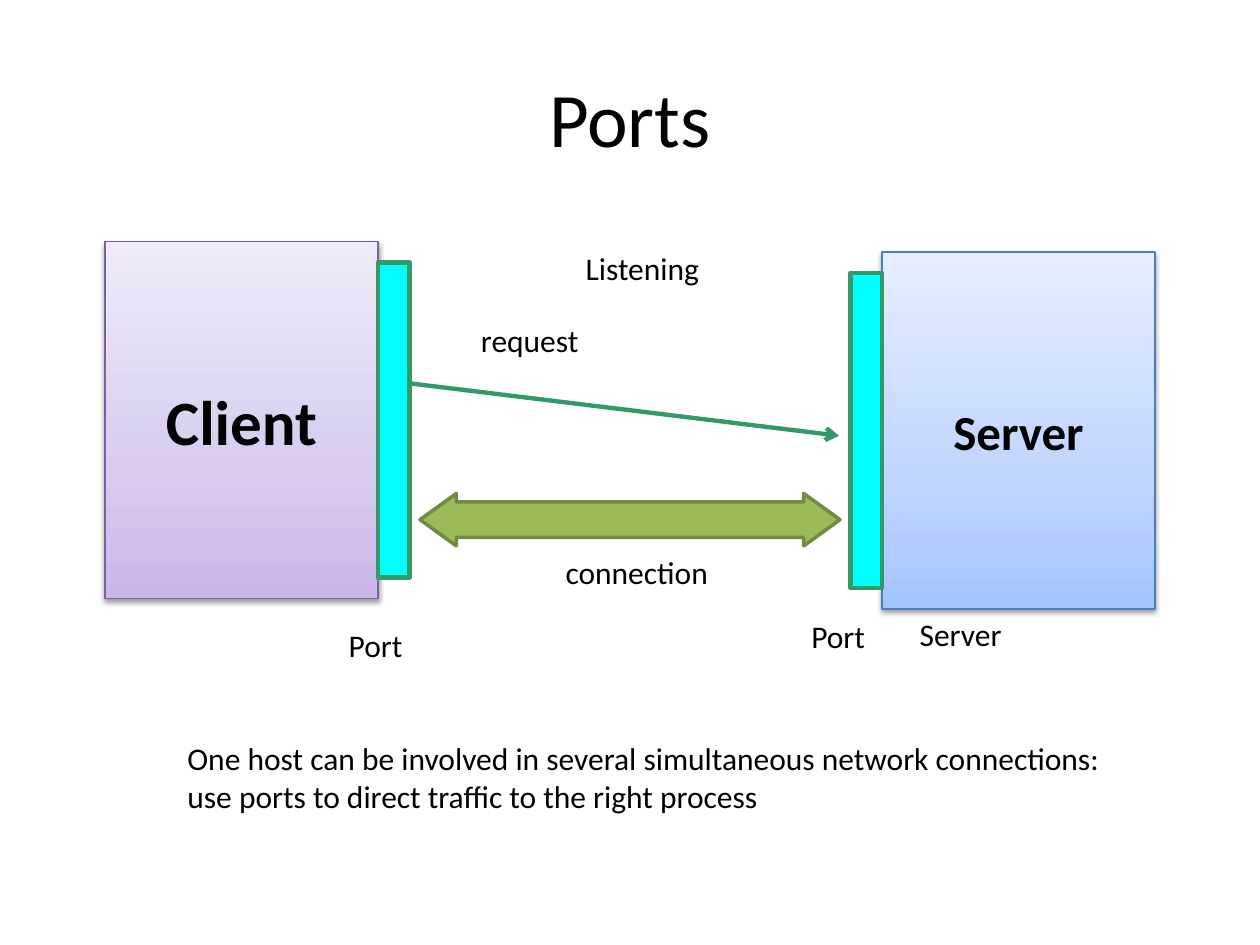
from copy import deepcopy
from dataclasses import dataclass

from lxml.etree import SubElement
from pptx import Presentation
from pptx.dml.color import RGBColor
from pptx.enum.shapes import MSO_CONNECTOR as Connector, MSO_SHAPE as Shape
from pptx.enum.text import MSO_ANCHOR as Anchor, PP_ALIGN as Align
from pptx.oxml.ns import qn
from pptx.util import Pt

FONT = "Calibri"
BLACK = RGBColor(0x00, 0x00, 0x00)
CYAN = RGBColor(0x00, 0xFF, 0xFF)
GREEN = RGBColor(0x33, 0x99, 0x66)
OLIVE = RGBColor(0x9B, 0xBB, 0x59)
DARK_OLIVE = RGBColor(0x73, 0x8A, 0x42)
PURPLE = RGBColor(0x7D, 0x60, 0xA0)
LILACS = (RGBColor(0xC9, 0xB5, 0xE8), RGBColor(0xD8, 0xCB, 0xEE), RGBColor(0xF0, 0xEA, 0xF9))
BLUE = RGBColor(0x4B, 0x7E, 0xBC)
SKIES = (RGBColor(0xA4, 0xC4, 0xFF), RGBColor(0xBF, 0xD4, 0xFF), RGBColor(0xE6, 0xEE, 0xFF))
STOPS = (0, 0.35, 1)

HOST_WIDTH, HOST_HEIGHT = 156, 204
PORT_WIDTH, PORT_HEIGHT, PORT_INSET = 18, 180, 12


@dataclass
class Host:
    name: str
    left: float
    top: float
    port_left: float
    size: float
    line: RGBColor
    gradient: tuple


@dataclass
class Label:
    text: str
    left: float
    top: float
    width: float
    height: float = 29
    align: Align = Align.LEFT


HOSTS = [
    Host("Client", 60, 138, 60 + HOST_WIDTH, 36, PURPLE, LILACS),
    Host("Server", 504, 144, 504 - PORT_WIDTH, 28, BLUE, SKIES),
]
LABELS = [
    Label("Server", 518.4, 347.8, 121),
    Label("Listening", 327.6, 139, 158),
    Label("request", 267.8, 180, 136),
    Label("connection", 315.4, 312.5, 97, align=Align.CENTER),
    Label("Port", 456.5, 349.2, 79),
    Label("Port", 192.2, 354.2, 55),
    Label("One host can be involved in several simultaneous network connections:\n"
          "use ports to direct traffic to the right process", 100, 419, 542, 51),
]


def write(frame, text: str, size: float, align: Align, bold: bool = False) -> None:
    frame.text = text
    for paragraph in frame.paragraphs:
        paragraph.alignment = align
        font = paragraph.font
        font.name, font.size, font.bold = FONT, Pt(size), bold
        font.color.rgb = BLACK


def add_block(slide, kind: Shape, left: float, top: float, width: float, height: float,
              line: RGBColor, weight: float):
    block = slide.shapes.add_shape(kind, Pt(left), Pt(top), Pt(width), Pt(height))
    block.shadow.inherit = False
    block.line.color.rgb = line
    block.line.width = Pt(weight)
    return block


def fill_gradient(shape, colors: tuple) -> None:
    shape.fill.gradient()
    shape.fill.gradient_angle = 90
    last = shape.fill._fill._gradFill.gsLst[-1]
    last.addnext(deepcopy(last))
    for stop, color, position in zip(shape.fill.gradient_stops, colors, STOPS):
        stop.color.rgb = color
        stop.position = position


def add_shadow(shape) -> None:
    effects = shape._element.spPr.find(qn("a:effectLst"))
    shadow = SubElement(effects, qn("a:outerShdw"), blurRad=str(Pt(3.1)), dist=str(Pt(1.6)),
                        dir="5400000", rotWithShape="0")
    color = SubElement(shadow, qn("a:srgbClr"), val=str(BLACK))
    SubElement(color, qn("a:alpha"), val="38000")


def add_host(slide, host: Host) -> None:
    box = add_block(slide, Shape.RECTANGLE, host.left, host.top, HOST_WIDTH, HOST_HEIGHT,
                    host.line, 0.75)
    fill_gradient(box, host.gradient)
    add_shadow(box)
    box.text_frame.word_wrap = False
    box.text_frame.vertical_anchor = Anchor.MIDDLE
    write(box.text_frame, host.name, host.size, Align.CENTER, bold=True)


def add_port(slide, host: Host) -> None:
    port = add_block(slide, Shape.RECTANGLE, host.port_left, host.top + PORT_INSET,
                     PORT_WIDTH, PORT_HEIGHT, GREEN, 2.5)
    port.fill.solid()
    port.fill.fore_color.rgb = CYAN


def add_request(slide) -> None:
    request = slide.shapes.add_connector(Connector.STRAIGHT, Pt(233.5), Pt(219), Pt(479.5), Pt(249))
    request.line.color.rgb = GREEN
    request.line.width = Pt(2.5)
    SubElement(request.line._get_or_add_ln(), qn("a:tailEnd"), type="arrow")
    SubElement(request._element.spPr, qn("a:effectLst"))


def add_connection(slide) -> None:
    connection = add_block(slide, Shape.LEFT_RIGHT_ARROW, 240, 282, 240, 30, DARK_OLIVE, 2)
    connection.fill.solid()
    connection.fill.fore_color.rgb = OLIVE
    connection.adjustments[0] = 0.675
    connection.adjustments[1] = 0.692


def add_label(slide, label: Label) -> None:
    box = slide.shapes.add_textbox(Pt(label.left), Pt(label.top), Pt(label.width), Pt(label.height))
    box.text_frame.word_wrap = True
    write(box.text_frame, label.text, 18, label.align)


def main() -> None:
    deck = Presentation()
    deck.slide_width, deck.slide_height = Pt(720), Pt(540)
    slide = deck.slides.add_slide(deck.slide_layouts[5])

    # Title
    title = slide.shapes.title
    title.left, title.top, title.width, title.height = Pt(36), Pt(21.6), Pt(648), Pt(90)
    title.text_frame.vertical_anchor = Anchor.MIDDLE
    write(title.text_frame, "Ports", 44, Align.CENTER)

    # Hosts, the traffic between them, and their ports
    for host in HOSTS:
        add_host(slide, host)
    add_request(slide)
    add_connection(slide)
    for host in HOSTS:
        add_port(slide, host)

    # Captions
    for label in LABELS:
        add_label(slide, label)

    deck.save("out.pptx")


if __name__ == "__main__":
    main()
